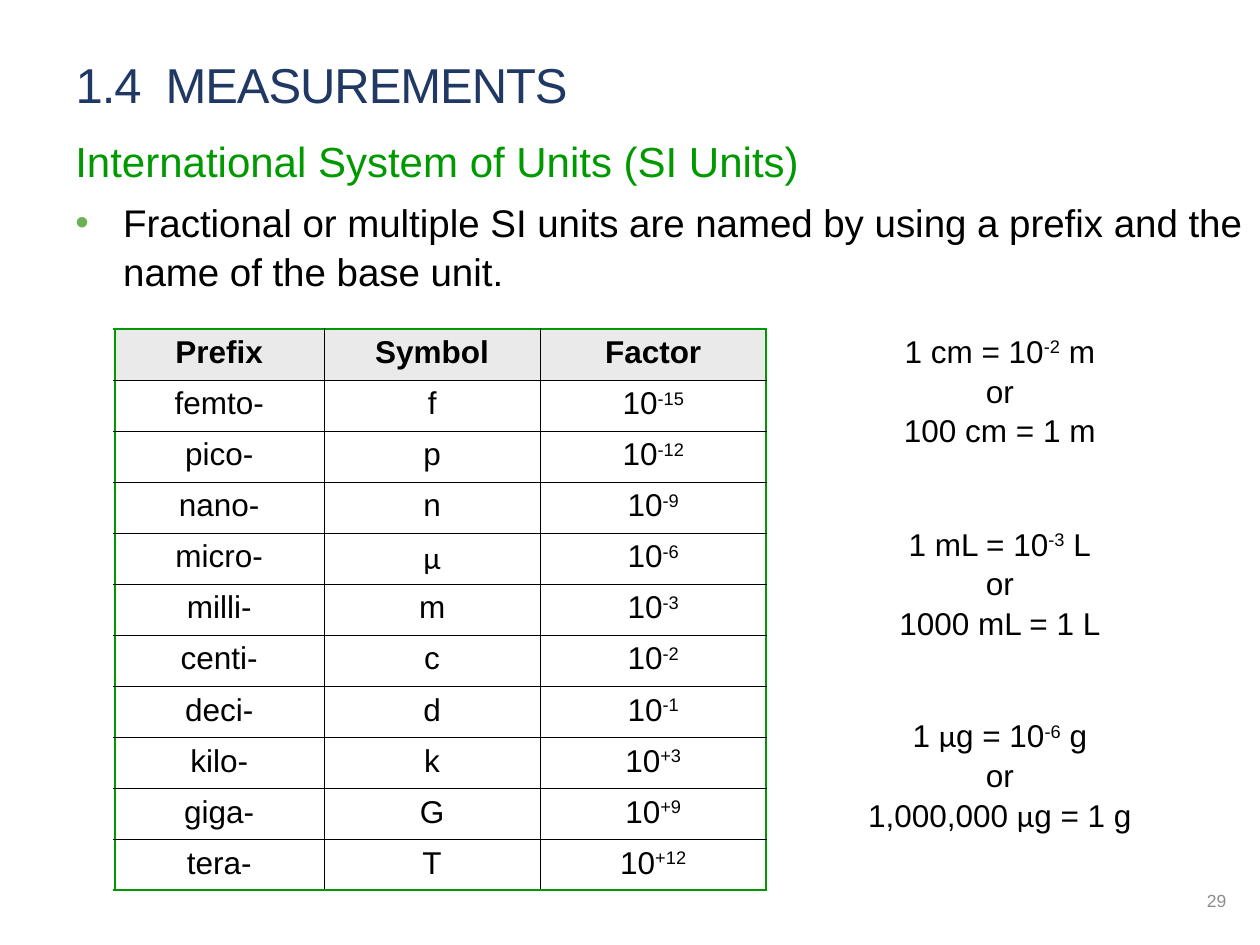
from itertools import groupby

from lxml import etree
from pptx import Presentation
from pptx.dml.color import RGBColor
from pptx.enum import text
from pptx.oxml.ns import qn
from pptx.util import Inches, Pt

THEME = {
    "font": "Arial", "mu_font": "Calibri",
    "navy": "203864", "green": "009900", "bullet": "6CB255",
    "black": "000000", "gray": "8C8C8C", "header": "EAEAEA", "white": "FFFFFF",
    "title": 28, "heading": 24, "body": 22, "label": 18, "number": 10,
    "thick": 1.5, "thin": 0.25, "leading": 1.05,
}

# Text between a pair of ^ marks is superscript.
TITLE = "1.4  MEASUREMENTS"
HEADING = "International System of Units (SI Units)"
POINT = ("Fractional or multiple SI units are named by using a prefix "
         "and the name of the base unit.")
PAGE_NUMBER = "29"
PREFIXES = [
    ("Prefix", "Symbol", "Factor"),
    ("femto-", "f", "10^-15^"),
    ("pico-", "p", "10^-12^"),
    ("nano-", "n", "10^-9^"),
    ("micro-", "μ", "10^-6^"),
    ("milli-", "m", "10^-3^"),
    ("centi-", "c", "10^-2^"),
    ("deci-", "d", "10^-1^"),
    ("kilo-", "k", "10^+3^"),
    ("giga-", "G", "10^+9^"),
    ("tera-", "T", "10^+12^"),
]
COLUMN_WIDTHS = (1.66, 1.72, 1.79)
ROW_HEIGHT = 4.46 / len(PREFIXES)
EXAMPLES = [  # left, top, width, lines
    (7.06, 2.57, 1.75, ("1 cm = 10^-2^ m", "or", "100 cm = 1 m")),
    (7.03, 4.10, 1.81, ("1 mL = 10^-3^ L", "or", "1000 mL = 1 L")),
    (6.78, 5.62, 2.31, ("1 μg = 10^-6^ g", "or", "1,000,000 μg = 1 g")),
]


def write(paragraph, content, size, color, align=None, bold=False):
    """Fill a paragraph, raising ^marked^ parts and setting μ in its own font."""
    for index, part in enumerate(content.split("^")):
        for is_mu, letters in groupby(part, lambda letter: letter == "μ"):
            run = paragraph.add_run()
            run.text = "".join(letters)
            if is_mu:
                run.font.name = THEME["mu_font"]
            if index % 2:
                run._r.get_or_add_rPr().set("baseline", "30000")
    paragraph.alignment = align
    font = paragraph.font
    font.name, font.size, font.bold = THEME["font"], Pt(THEME[size]), bold
    font.color.rgb = RGBColor.from_string(THEME[color])


def add_text_frame(slide, left, top, width, height, wrap=True):
    box = slide.shapes.add_textbox(*map(Inches, (left, top, width, height)))
    box.text_frame.word_wrap = wrap
    return box.text_frame


def add_bullet(paragraph):
    properties = paragraph._p.get_or_add_pPr()
    properties.set("marL", str(Inches(0.38)))
    properties.set("indent", str(-Inches(0.38)))
    color = etree.SubElement(properties, qn("a:buClr"))
    etree.SubElement(color, qn("a:srgbClr"), val=THEME["bullet"])
    etree.SubElement(properties, qn("a:buFont"), typeface=THEME["font"])
    etree.SubElement(properties, qn("a:buChar"), char="•")


def set_borders(cell, outer_sides):
    """Draw outer sides thick and green, the others thin and black."""
    properties = cell._tc.get_or_add_tcPr()
    for index, side in enumerate("LRTB"):
        weight, color = ("thick", "green") if side in outer_sides else ("thin", "black")
        line = etree.Element(qn("a:ln" + side), w=str(Pt(THEME[weight])))
        fill = etree.SubElement(line, qn("a:solidFill"))
        etree.SubElement(fill, qn("a:srgbClr"), val=THEME[color])
        properties.insert(index, line)


def add_title(slide):
    title = slide.shapes.title
    title.left, title.top, title.width, title.height = map(Inches, (0.5, 0.38, 9.33, 0.57))
    frame = title.text_frame
    frame.vertical_anchor = text.MSO_ANCHOR.BOTTOM
    frame.auto_size = text.MSO_AUTO_SIZE.NONE
    paragraph = frame.paragraphs[0]
    write(paragraph, TITLE, "title", "navy", text.PP_ALIGN.LEFT)
    paragraph.runs[0]._r.get_or_add_rPr().set("spc", "-60")


def add_body(slide):
    frame = add_text_frame(slide, 0.5, 1.01, 9.5, 4.31)
    heading, point = frame.paragraphs[0], frame.add_paragraph()
    add_bullet(point)
    write(heading, HEADING, "heading", "green")
    write(point, POINT, "body", "black")
    for paragraph in (heading, point):
        paragraph.space_after = Pt(6)
        paragraph.line_spacing = THEME["leading"]


def add_prefix_table(slide):
    last_row, last_column = len(PREFIXES) - 1, len(COLUMN_WIDTHS) - 1
    table = slide.shapes.add_table(
        last_row + 1, last_column + 1, Inches(0.91), Inches(2.61),
        Inches(sum(COLUMN_WIDTHS)), Inches(ROW_HEIGHT * len(PREFIXES))).table
    for column, width in zip(table.columns, COLUMN_WIDTHS):
        column.width = Inches(width)
    for row_index, row in enumerate(PREFIXES):
        table.rows[row_index].height = Inches(ROW_HEIGHT)
        is_header = row_index == 0
        for column_index, content in enumerate(row):
            cell = table.cell(row_index, column_index)
            write(cell.text_frame.paragraphs[0], content, "label", "black",
                  text.PP_ALIGN.CENTER, is_header)
            cell.fill.solid()
            cell.fill.fore_color.rgb = RGBColor.from_string(
                THEME["header" if is_header else "white"])
            edges = {"L": column_index == 0, "R": column_index == last_column,
                     "T": is_header, "B": row_index == last_row}
            set_borders(cell, [side for side, outer in edges.items() if outer])


def add_examples(slide):
    for left, top, width, lines in EXAMPLES:
        frame = add_text_frame(slide, left, top, width, 1.01, wrap=False)
        frame.auto_size = text.MSO_AUTO_SIZE.SHAPE_TO_FIT_TEXT
        for index, line in enumerate(lines):
            paragraph = frame.add_paragraph() if index else frame.paragraphs[0]
            write(paragraph, line, "label", "black", text.PP_ALIGN.CENTER)
            paragraph.line_spacing = THEME["leading"]


def add_page_number(slide):
    frame = add_text_frame(slide, 7.58, 6.95, 2.25, 0.4)
    frame.vertical_anchor = text.MSO_ANCHOR.MIDDLE
    write(frame.paragraphs[0], PAGE_NUMBER, "number", "gray", text.PP_ALIGN.RIGHT)


def main():
    presentation = Presentation()
    presentation.slide_width, presentation.slide_height = Inches(10), Inches(7.5)
    slide = presentation.slides.add_slide(presentation.slide_layouts[5])
    add_title(slide)
    add_page_number(slide)
    add_prefix_table(slide)
    add_body(slide)
    add_examples(slide)
    presentation.save("out.pptx")


if __name__ == "__main__":
    main()
